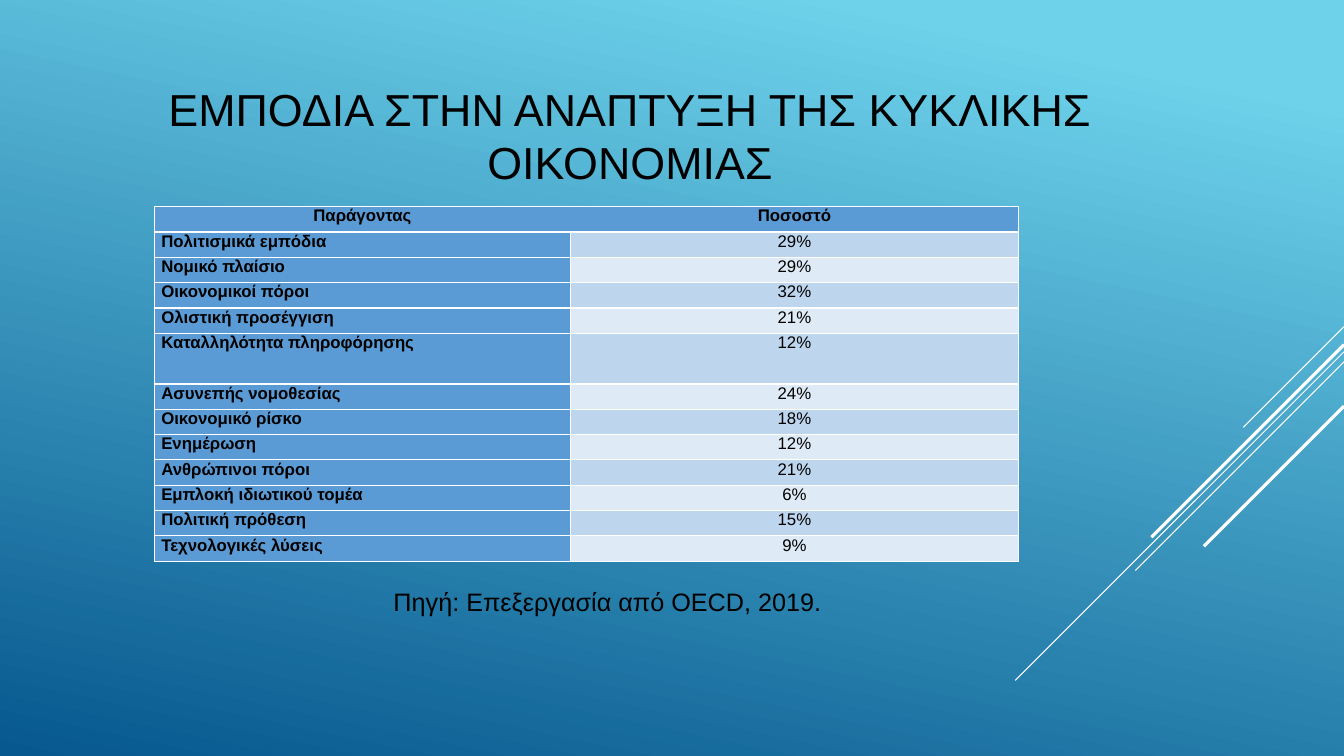
"""Build the slide on obstacles to the circular economy."""
from lxml import etree
from pptx import Presentation
from pptx.dml.color import RGBColor
from pptx.enum.shapes import MSO_CONNECTOR
from pptx.enum.text import MSO_ANCHOR, MSO_AUTO_SIZE, PP_ALIGN
from pptx.oxml.ns import qn
from pptx.util import Inches, Pt

STRAIGHT = MSO_CONNECTOR.STRAIGHT
MIDDLE, TOP = MSO_ANCHOR.MIDDLE, MSO_ANCHOR.TOP
NO_FIT = MSO_AUTO_SIZE.NONE
CENTER, JUSTIFY = PP_ALIGN.CENTER, PP_ALIGN.JUSTIFY

WHITE = RGBColor(0xFF, 0xFF, 0xFF)
BLACK = RGBColor(0x00, 0x00, 0x00)
SKY = RGBColor(0x6E, 0xD2, 0xEB)
DEEP_BLUE = RGBColor(0x06, 0x58, 0x8E)
HEAD_BLUE = RGBColor(0x5B, 0x9B, 0xD5)
BANDS = (RGBColor(0xBD, 0xD6, 0xEE), RGBColor(0xDE, 0xEA, 0xF6))

FONT = "Arial"
SLIDE_W = 13.33
TITLE = "ΕΜΠΟΔΙΑ ΣΤΗΝ ΑΝΑΠΤΥΞΗ ΤΗΣ ΚΥΚΛΙΚΗΣ ΟΙΚΟΝΟΜΙΑΣ"
SOURCE = "Πηγή: Επεξεργασία από OECD, 2019."
HEADER = ("Παράγοντας", "Ποσοστό")
FACTORS = [
    ("Πολιτισμικά εμπόδια", "29%"),
    ("Νομικό πλαίσιο", "29%"),
    ("Οικονομικοί πόροι", "32%"),
    ("Ολιστική προσέγγιση", "21%"),
    ("Καταλληλότητα πληροφόρησης", "12%"),
    ("Ασυνεπής νομοθεσίας", "24%"),
    ("Οικονομικό ρίσκο", "18%"),
    ("Ενημέρωση", "12%"),
    ("Ανθρώπινοι πόροι", "21%"),
    ("Εμπλοκή ιδιωτικού τομέα", "6%"),
    ("Πολιτική πρόθεση", "15%"),
    ("Τεχνολογικές λύσεις", "9%"),
]
TALL_ROW = 5
TABLE_H = 3.52
COL_WIDTHS = (4.13, 4.44)
DIAGONALS = [
    (3.24, 1.0, 0.75),
    (3.49, 3.26, 0.75),
    (3.59, 2.07, 0.75),
    (3.42, 1.91, 2.25),
    (4.03, 1.39, 2.25),
]


def set_background(s):
    """Fill the slide with a steep blue gradient."""
    fill = s.background.fill
    fill.gradient()
    fill.gradient_angle = 258
    for stop, color, position in zip(fill.gradient_stops, (SKY, DEEP_BLUE), (0.1, 1)):
        stop.color.rgb = color
        stop.position = position


def add_diagonal(s, top, run, width):
    """Draw a white 45-degree line down from the right edge."""
    line = s.shapes.add_connector(
        STRAIGHT, Inches(SLIDE_W), Inches(top), Inches(SLIDE_W - run), Inches(top + run))
    line.line.color.rgb = WHITE
    line.line.width = Pt(width)
    etree.SubElement(line._element.spPr, qn("a:effectLst"))


def write(tf, text, size, align=CENTER, bold=False):
    """Put one formatted paragraph in a text frame."""
    tf.text = text
    p = tf.paragraphs[0]
    p.alignment = align
    font = p.runs[0].font
    font.name, font.size, font.bold = FONT, Pt(size), bold
    font.color.rgb = BLACK


def place_text(sp, box, text, size):
    """Position a shape and write centred text in it."""
    sp.left, sp.top, sp.width, sp.height = map(Inches, box)
    tf = sp.text_frame
    tf.word_wrap = True
    tf.auto_size = NO_FIT
    tf.vertical_anchor = MIDDLE
    write(tf, text, size)


def set_borders(cell, hidden=()):
    """Give a cell white borders except on the hidden sides."""
    tc_pr = cell._tc.get_or_add_tcPr()
    for i, side in enumerate(("lnL", "lnR", "lnT", "lnB")):
        ln = etree.Element(qn(f"a:{side}"), w=str(Pt(1)))
        if side in hidden:
            etree.SubElement(ln, qn("a:noFill"))
        else:
            fill = etree.SubElement(ln, qn("a:solidFill"))
            etree.SubElement(fill, qn("a:srgbClr"), val=str(WHITE))
        tc_pr.insert(i, ln)


def add_factor_table(s):
    """Add the table of factors and percentages."""
    rows = [HEADER, *FACTORS]
    table = s.shapes.add_table(
        len(rows), len(HEADER), Inches(1.53), Inches(2.05),
        Inches(sum(COL_WIDTHS)), Inches(TABLE_H)).table
    for column, width in zip(table.columns, COL_WIDTHS):
        column.width = Inches(width)
    unit = TABLE_H / (len(rows) + 1)
    for r, values in enumerate(rows):
        table.rows[r].height = Inches(unit * (2 if r == TALL_ROW else 1))
        for c, text in enumerate(values):
            cell = table.cell(r, c)
            cell.margin_left = cell.margin_right = Inches(0.07)
            cell.margin_top = cell.margin_bottom = Inches(0)
            cell.vertical_anchor = TOP
            heading = r == 0 or c == 0
            cell.fill.solid()
            cell.fill.fore_color.rgb = HEAD_BLUE if heading else BANDS[(r - 1) % 2]
            write(cell.text_frame, text, 12, JUSTIFY if r and c == 0 else CENTER, heading)
            set_borders(cell, () if r else (("lnR",), ("lnL",))[c])


def main():
    """Create and save the presentation."""
    prs = Presentation()
    prs.slide_width, prs.slide_height = Inches(SLIDE_W), Inches(7.5)
    s = prs.slides.add_slide(prs.slide_layouts[5])
    set_background(s)
    for diagonal in DIAGONALS:
        add_diagonal(s, *diagonal)
    place_text(s.shapes.title, (0.75, 0.75, 11, 1.18), TITLE, 32)
    caption = s.shapes.add_textbox(0, 0, 0, 0)
    place_text(caption, (0.75, 5.75, 10.55, 0.43), SOURCE, 18)
    add_factor_table(s)
    prs.save("out.pptx")


if __name__ == "__main__":
    main()
